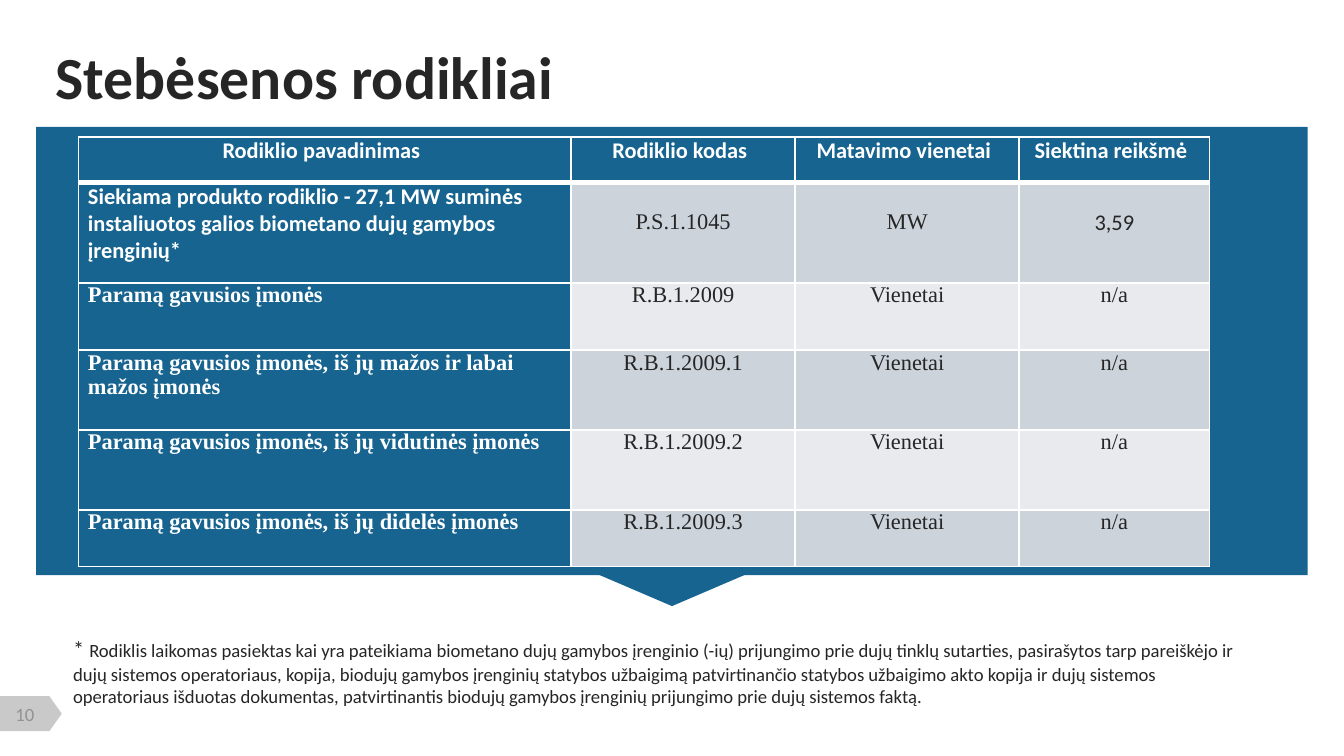
import pptx
import pptx.util
import pptx.dml.color
import pptx.enum.shapes
import pptx.enum.text
import pptx.oxml
import pptx.oxml.ns

COLUMNS, ROWS = 100, 56.25
UNIT = pptx.util.Inches(0.1)
BLUE, WHITE, INK = "176490", "FFFFFF", "262626"
BANDS = ["CCD3DB", "E8EAEE"]
SHAPES = pptx.enum.shapes.MSO_SHAPE
ALIGN = pptx.enum.text.PP_ALIGN
ANCHOR = pptx.enum.text.MSO_ANCHOR
SANS, SERIF = "Calibri", "Times New Roman"

HEADINGS = ["Rodiklio pavadinimas", "Rodiklio kodas", "Matavimo vienetai", "Siektina reikšmė"]
INDICATORS = [
    ["Siekiama produkto rodiklio - 27,1 MW suminės instaliuotos galios biometano dujų gamybos įrenginių*",
     "P.S.1.1045", "MW", "3,59"],
    ["Paramą gavusios įmonės", "R.B.1.2009", "Vienetai", "n/a"],
    ["Paramą gavusios įmonės, iš jų mažos ir labai mažos įmonės", "R.B.1.2009.1", "Vienetai", "n/a"],
    ["Paramą gavusios įmonės, iš jų vidutinės įmonės", "R.B.1.2009.2", "Vienetai", "n/a"],
    ["Paramą gavusios įmonės, iš jų didelės įmonės", "R.B.1.2009.3", "Vienetai", "n/a"],
]
FOOTNOTE = (
    "Rodiklis laikomas pasiektas kai yra pateikiama biometano dujų gamybos įrenginio (-ių) "
    "prijungimo prie dujų tinklų sutarties, pasirašytos tarp pareiškėjo ir dujų sistemos "
    "operatoriaus, kopija, biodujų gamybos įrenginių statybos užbaigimą patvirtinančio statybos "
    "užbaigimo akto kopija ir dujų sistemos operatoriaus išduotas dokumentas, patvirtinantis "
    "biodujų gamybos įrenginių prijungimo prie dujų sistemos faktą."
)


def grid(*lengths):
    return [round(length * UNIT) for length in lengths]


def color(value):
    return pptx.dml.color.RGBColor.from_string(value)


def apply(target, formats):
    for name, value in formats.items():
        setattr(target, name, value)


def write(para, text, size, ink=INK, name=SANS, bold=False):
    span = para.add_run()
    span.text = text
    apply(span.font, {"size": pptx.util.Pt(size), "name": name, "bold": bold})
    span.font.color.rgb = color(ink)


def add_box(page, area, margins, anchor=ANCHOR.TOP):
    frame = page.shapes.add_textbox(*grid(*area)).text_frame
    sides = ["margin_left", "margin_top", "margin_right", "margin_bottom"]
    apply(frame, {"word_wrap": True, "vertical_anchor": anchor, **dict(zip(sides, grid(*margins)))})
    return frame.paragraphs[0]


def add_block(shapes, kind, area, fill, rotation=0):
    block = shapes.add_shape(kind, *grid(*area))
    block.rotation = rotation
    block.shadow.inherit = False
    block.fill.solid()
    block.fill.fore_color.rgb = color(fill)
    block.line.fill.background()


def add_page_number(page, left, top, width, height):
    area = (left + (width - height) / 2, top + (height - width) / 2, height, width)
    add_block(page.shapes, SHAPES.FLOWCHART_OFFPAGE_CONNECTOR, area, "C9C9C9", 270)
    para = add_box(page, (left + 0.2, top + 0.5, 3.3, 1.7), (0, 0, 0, 0), ANCHOR.MIDDLE)
    para.alignment = ALIGN.CENTER
    write(para, "10", 10, "929292")


def add_title(page, *area):
    para = add_box(page, area, (0, 0.5, 1, 0.5), ANCHOR.MIDDLE)
    write(para, "Stebėsenos rodikliai", 32, bold=True)


def add_panel(page, left, top, width, height):
    panel = page.shapes.add_group_shape()
    add_block(panel.shapes, SHAPES.RECTANGLE, (left, top, width, height), BLUE)
    pointer = (left + width / 2 - 7, top + height - 0.7, 14, 3)
    add_block(panel.shapes, SHAPES.ISOSCELES_TRIANGLE, pointer, BLUE, 180)


def add_borders(cell, weights):
    properties = cell._tc.get_or_add_tcPr()
    for index, (side, weight) in enumerate(weights.items()):
        border = pptx.oxml.parse_xml(
            f'<a:ln{side} {pptx.oxml.ns.nsdecls("a")} w="{pptx.util.Pt(weight)}">'
            f'<a:solidFill><a:srgbClr val="{WHITE}"/></a:solidFill></a:ln{side}>'
        )
        properties.insert(index, border)


def fill_cell(cell, text, row, column):
    heading, label = row == 0, column == 0
    emphasis = heading or label
    top = 2 if row == 1 and not label else 0
    margins = grid(0.7, 1.2 if heading else 0.7, top, 0)
    apply(cell, dict(zip(["margin_left", "margin_right", "margin_top", "margin_bottom"], margins)))
    cell.fill.solid()
    cell.fill.fore_color.rgb = color(BLUE if emphasis else BANDS[(row - 1) % 2])
    add_borders(cell, {"L": 1, "R": 1, "T": 3 if row == 1 else 1, "B": 3 if heading else 1})
    para = cell.text_frame.paragraphs[0]
    para.alignment = ALIGN.LEFT if label and not heading else ALIGN.CENTER
    sans = heading or (row == 1 and column in (0, 3))
    write(para, text, 12, WHITE if emphasis else INK, SANS if sans else SERIF, emphasis)


def add_indicators(page, left, top, widths, heights):
    records = [HEADINGS] + INDICATORS
    area = grid(left, top, sum(widths), sum(heights))
    table = page.shapes.add_table(len(heights), len(widths), *area).table
    for column, width in zip(table.columns, grid(*widths)):
        column.width = width
    for row, height in zip(table.rows, grid(*heights)):
        row.height = height
    for row, record in enumerate(records):
        for column, text in enumerate(record):
            fill_cell(table.cell(row, column), text, row, column)


def add_footnote(page, *area):
    para = add_box(page, area, (1, 0.5, 1, 0.5))
    write(para, "* ", 12)
    write(para, FOOTNOTE, 10)


def main():
    deck = pptx.Presentation()
    apply(deck, dict(zip(["slide_width", "slide_height"], grid(COLUMNS, ROWS))))
    page = deck.slides.add_slide(deck.slide_layouts[6])
    add_page_number(page, 0, 51.8, 4.6, 2.6)
    add_title(page, 4.15, 3.7, 91.3, 3.9)
    add_panel(page, 2.7, 9.45, 94.6, 33.35)
    add_indicators(page, 5.85, 10.2, [36.65, 16.67, 16.67, 14.15], [3.4, 7.45, 5, 5.95, 5.95, 4.2])
    add_footnote(page, 4.45, 46.8, 89.2, 6.4)
    deck.save("out.pptx")


if __name__ == "__main__":
    main()
